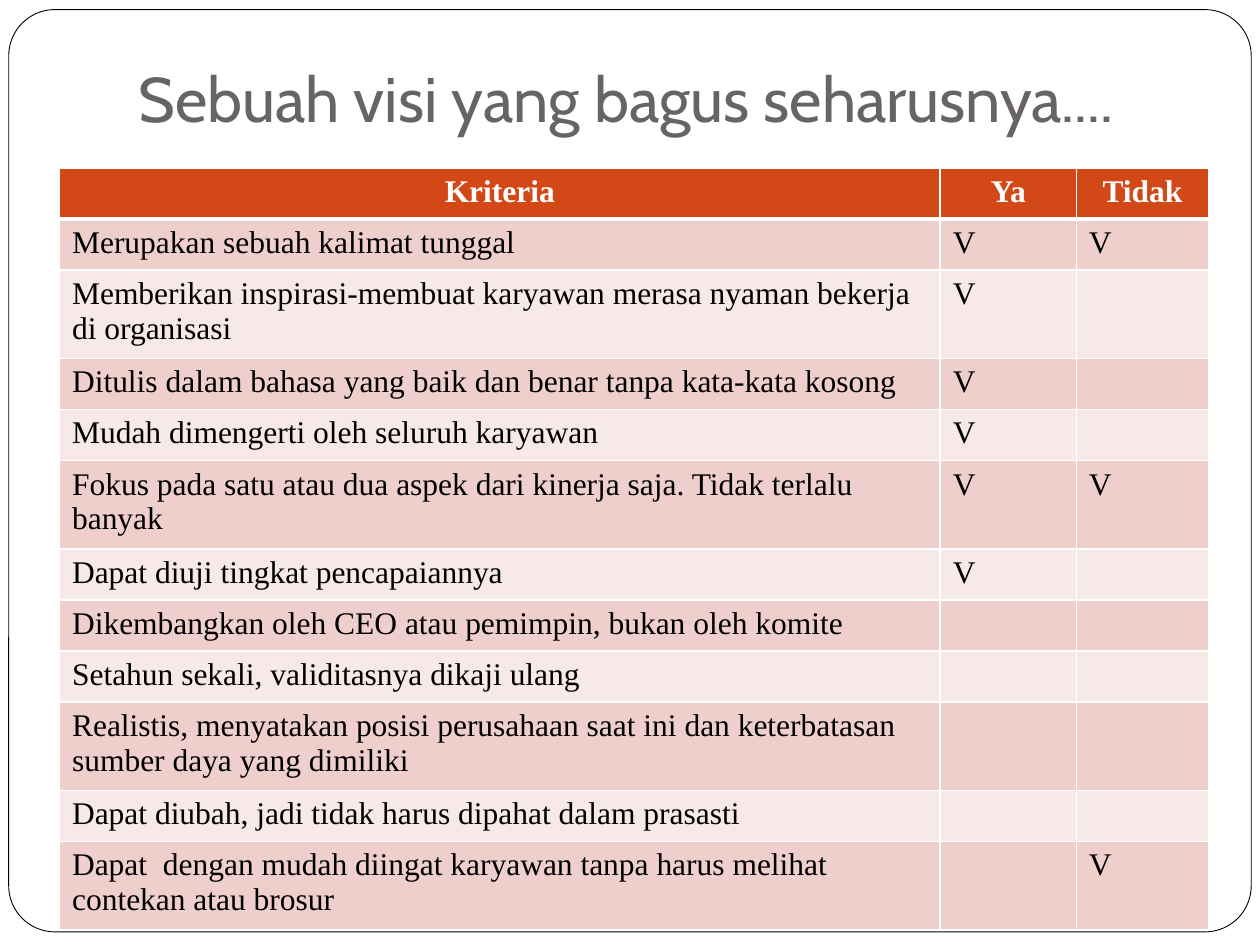
from lxml.etree import SubElement
from pptx import Presentation
from pptx.dml.color import RGBColor
from pptx.enum.shapes import MSO_SHAPE
from pptx.enum.text import MSO_ANCHOR, PP_ALIGN
from pptx.oxml.ns import qn
from pptx.util import Pt

WHITE = RGBColor(0xFF, 0xFF, 0xFF)
BLACK = RGBColor(0x00, 0x00, 0x00)
GREY = RGBColor(0x69, 0x64, 0x64)
ORANGE = RGBColor(0xD3, 0x48, 0x17)
ROSE = RGBColor(0xEF, 0xCF, 0xCC)
PALE_ROSE = RGBColor(0xF7, 0xE9, 0xE8)

COLUMN_WIDTHS = (503.3, 77.8, 75.6)
ROW_HEIGHT = 29.2
HEADERS = ("Kriteria", "Ya", "Tidak")
CRITERIA = (
    ("Merupakan sebuah kalimat tunggal", "V", "V"),
    ("Memberikan inspirasi-membuat karyawan merasa nyaman bekerja di organisasi", "V", ""),
    ("Ditulis dalam bahasa yang baik dan benar tanpa kata-kata kosong", "V", ""),
    ("Mudah dimengerti oleh seluruh karyawan", "V", ""),
    ("Fokus pada satu atau dua aspek dari kinerja saja. Tidak terlalu banyak", "V", "V"),
    ("Dapat diuji tingkat pencapaiannya", "V", ""),
    ("Dikembangkan oleh CEO atau pemimpin, bukan oleh komite", "", ""),
    ("Setahun sekali, validitasnya dikaji ulang", "", ""),
    ("Realistis, menyatakan posisi perusahaan saat ini dan keterbatasan sumber daya yang dimiliki", "", ""),
    ("Dapat diubah, jadi tidak harus dipahat dalam prasasti", "", ""),
    ("Dapat  dengan mudah diingat karyawan tanpa harus melihat contekan atau brosur", "", "V"),
)


def write_text(frame, text, font="Times New Roman", size=18, color=BLACK, bold=False, align=PP_ALIGN.LEFT):
    """Write one formatted paragraph into a text frame."""
    para = frame.paragraphs[0]
    para.alignment = align
    para.font.size = Pt(size)
    if text:
        span = para.add_run()
        span.text = text
        span.font.name = font
        span.font.size = Pt(size)
        span.font.bold = bold
        span.font.color.rgb = color


def set_borders(cell, top=1, bottom=1):
    """Draw white lines around a table cell."""
    properties = cell._tc.get_or_add_tcPr()
    for side, width in (("L", 1), ("R", 1), ("T", top), ("B", bottom)):
        line = SubElement(properties, qn(f"a:ln{side}"), w=str(Pt(width)))
        fill = SubElement(line, qn("a:solidFill"))
        SubElement(fill, qn("a:srgbClr"), val=str(WHITE))


def add_frame(page, left, top, width, height):
    """Place the rounded outline around the page."""
    box = page.shapes.add_shape(MSO_SHAPE.ROUNDED_RECTANGLE, Pt(left), Pt(top), Pt(width), Pt(height))
    box.adjustments[0] = 0.05
    box.shadow.inherit = False
    box.fill.solid()
    box.fill.fore_color.rgb = WHITE
    box.line.color.rgb = BLACK
    box.line.width = Pt(0.5)


def add_title(page, left, top, width, height):
    """Place the heading at the bottom of its box."""
    frame = page.shapes.add_textbox(Pt(left), Pt(top), Pt(width), Pt(height)).text_frame
    frame.word_wrap = True
    frame.vertical_anchor = MSO_ANCHOR.BOTTOM
    frame.margin_bottom = Pt(7.2)
    write_text(frame, "Sebuah visi yang bagus seharusnya....", font="Cabin", size=36, color=GREY)


def add_criteria_table(page, left, top, width, height):
    """Place the criteria table with its header and alternating rows."""
    rows = (HEADERS,) + CRITERIA
    table = page.shapes.add_table(len(rows), len(HEADERS), Pt(left), Pt(top), Pt(width), Pt(height)).table
    for column, column_width in zip(table.columns, COLUMN_WIDTHS):
        column.width = Pt(column_width)
    for row_index, texts in enumerate(rows):
        header = row_index == 0
        for column_index, text in enumerate(texts):
            cell = table.cell(row_index, column_index)
            set_borders(cell, top=3 if row_index == 1 else 1, bottom=3 if header else 1)
            cell.fill.solid()
            cell.fill.fore_color.rgb = ORANGE if header else ROSE if row_index % 2 else PALE_ROSE
            write_text(
                cell.text_frame,
                text,
                color=WHITE if header else BLACK,
                bold=header,
                align=PP_ALIGN.CENTER if header else PP_ALIGN.LEFT,
            )


def main():
    """Build the slide and save the deck."""
    deck = Presentation()
    deck.slide_width, deck.slide_height = Pt(720), Pt(540)
    page = deck.slides.add_slide(deck.slide_layouts[6])
    add_frame(page, 5, 5.5, 710, 527)
    add_title(page, 72, 21.6, 612, 62.6)
    add_criteria_table(page, 34, 96, sum(COLUMN_WIDTHS), ROW_HEIGHT * (len(CRITERIA) + 1))
    deck.save("out.pptx")


if __name__ == "__main__":
    main()
